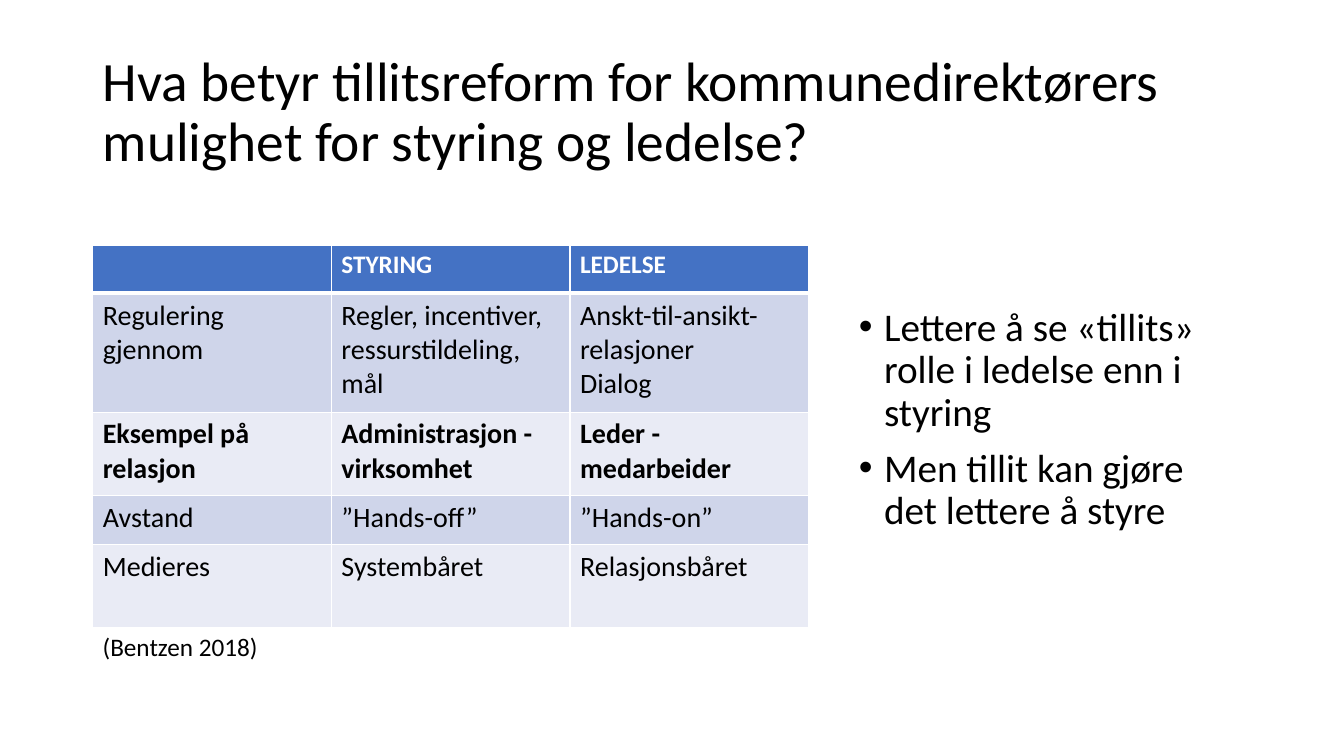
"""Builds the slide on trust reform, with a comparison table and two bullets."""
from dataclasses import dataclass

from lxml.etree import SubElement as Sub
from pptx import Presentation
from pptx.dml.color import RGBColor as RGB
from pptx.enum.text import MSO_ANCHOR as Anchor, MSO_AUTO_SIZE as AutoSize, PP_ALIGN as Align
from pptx.oxml import parse_xml
from pptx.oxml.ns import nsdecls, qn
from pptx.util import Inches, Pt


@dataclass(frozen=True)
class Theme:
    font: str = "Calibri"
    ink: str = "000000"
    paper: str = "FFFFFF"
    header: str = "4472C4"
    bands: tuple = ("CFD5EA", "E9EBF5")
    title: float = 39.6
    bullet: float = 28
    cell: float = 20
    small: float = 18


def style(p, size, color, bold=False):
    for r in p.runs:
        r.font.name, r.font.size, r.font.bold = theme.font, Pt(size), bold
        r.font.color.rgb = RGB.from_string(color)


def border(cell, widths):
    tc_pr = cell._tc.get_or_add_tcPr()
    for i, (side, width) in enumerate(zip("LRTB", widths)):
        tc_pr.insert(i, parse_xml(
            f'<a:ln{side} {nsdecls("a")} w="{Pt(width)}"><a:solidFill>'
            f'<a:srgbClr val="{theme.paper}"/></a:solidFill></a:ln{side}>'))


theme = Theme()
prs = Presentation()
prs.slide_width, prs.slide_height = Inches(13.33), Inches(7.5)
s = prs.slides.add_slide(prs.slide_layouts[5])
left, top = Inches(0.92), Inches(2.43)
content_w = prs.slide_width - 2 * left
table_w, side_w = Inches(7.1), Inches(3.99)

title = s.shapes.title
title.left, title.top, title.width, title.height = left, Inches(0.4), content_w, Inches(1.45)
tf = title.text_frame
tf.text = "Hva betyr tillitsreform for kommunedirektørers mulighet for styring og ledelse?"
tf.word_wrap, tf.auto_size, tf.vertical_anchor = True, AutoSize.NONE, Anchor.MIDDLE
p = tf.paragraphs[0]
p.alignment, p.line_spacing = Align.LEFT, 0.9
style(p, theme.title, theme.ink)

bullets = ["Lettere å se «tillits» rolle i ledelse enn i styring",
           "Men tillit kan gjøre det lettere å styre"]
sp = s.shapes.add_textbox(left + content_w - side_w, top, side_w, Inches(4.28))
tf = sp.text_frame
tf.text = "\n".join(bullets)
tf.word_wrap, tf.margin_top = True, Inches(0.62)
for p in tf.paragraphs:
    p.line_spacing, p.space_before = 0.9, Pt(10)
    p_pr = p._p.get_or_add_pPr()
    p_pr.set("marL", str(Inches(0.25)))
    p_pr.set("indent", str(-Inches(0.25)))
    Sub(p_pr, qn("a:buFont"), typeface="Arial")
    Sub(p_pr, qn("a:buChar"), char="•")
    style(p, theme.bullet, theme.ink)

rows = [
    (0.48, ["", "STYRING", "LEDELSE"]),
    (1.18, ["Regulering gjennom", "Regler, incentiver, ressurstildeling, mål",
            "Anskt-til-ansikt-relasjoner\nDialog"]),
    (0.83, ["Eksempel på relasjon", "Administrasjon - virksomhet", "Leder - medarbeider"]),
    (0.48, ["Avstand", "”Hands-off”", "”Hands-on”"]),
    (0.83, ["Medieres", "Systembåret", "Relasjonsbåret"]),
]
table_h = Inches(sum(height for height, _ in rows))
table = s.shapes.add_table(len(rows), 3, left, top, table_w, table_h).table
for column in table.columns:
    column.width = table_w // 3
for i, (height, texts) in enumerate(rows):
    table.rows[i].height = Inches(height)
    is_header = i == 0
    fill = theme.header if is_header else theme.bands[(i - 1) % 2]
    size, color = (theme.small, theme.paper) if is_header else (theme.cell, theme.ink)
    for j, text in enumerate(texts):
        cell = table.cell(i, j)
        cell.fill.solid()
        cell.fill.fore_color.rgb = RGB.from_string(fill)
        border(cell, (1, 1, 3 if i == 1 else 1, 3 if is_header else 1))
        if text:
            cell.text_frame.text = text
        for p in cell.text_frame.paragraphs:
            style(p, size, color, bold=i in (0, 2))

sp = s.shapes.add_textbox(left, Inches(6.21), Inches(1.76), Inches(0.4))
tf = sp.text_frame
tf.text = "(Bentzen 2018)"
tf.word_wrap, tf.auto_size = False, AutoSize.SHAPE_TO_FIT_TEXT
style(tf.paragraphs[0], theme.small, theme.ink)

prs.save("out.pptx")
